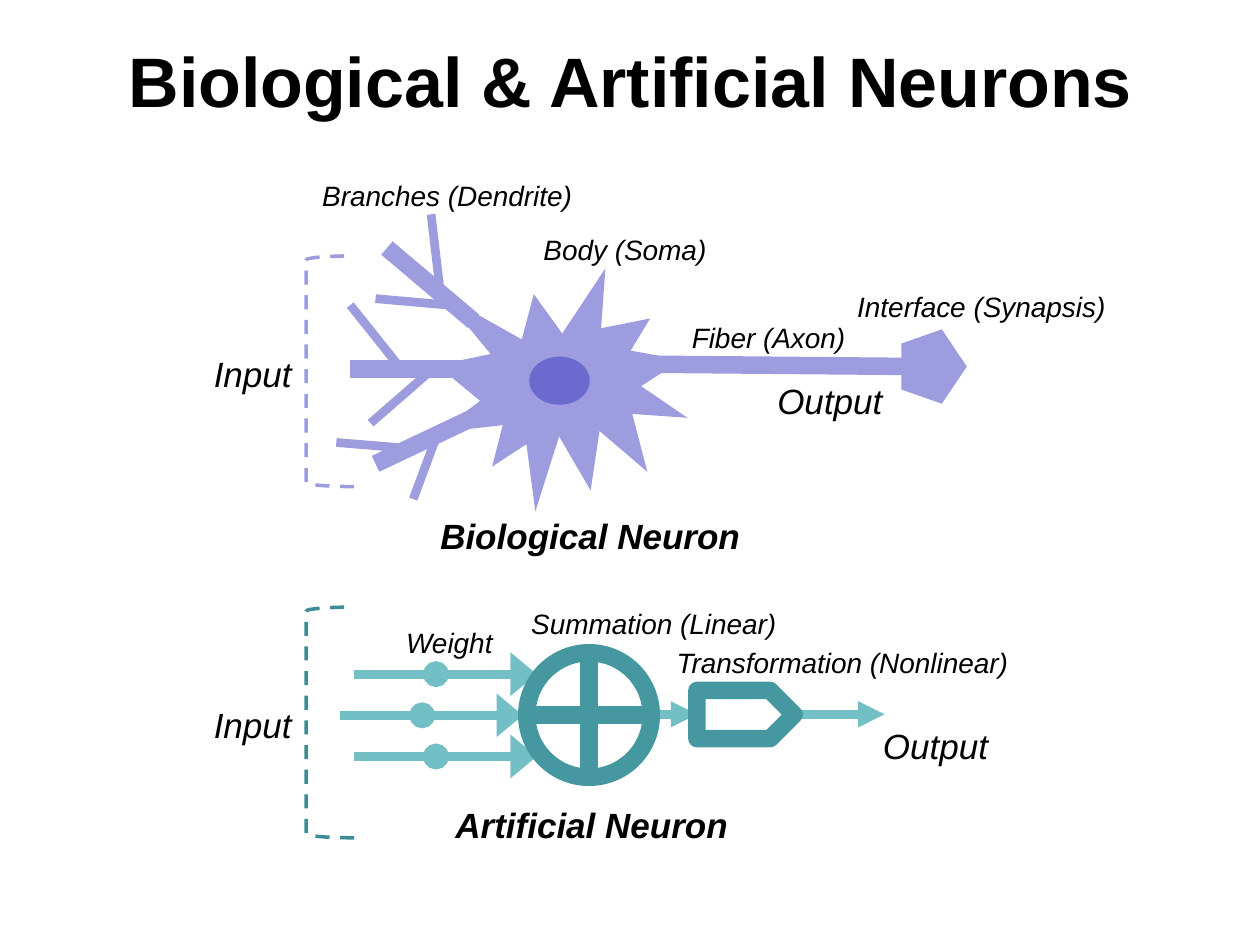
import dataclasses
import typing

import lxml.etree
import pptx
import pptx.dml.color
import pptx.enum.dml
import pptx.enum.shapes
import pptx.enum.text
import pptx.oxml.ns
import pptx.util

Cm = pptx.util.Cm
Pt = pptx.util.Pt
RGBColor = pptx.dml.color.RGBColor
Shape = pptx.enum.shapes.MSO_SHAPE
Align = pptx.enum.text.PP_ALIGN
Anchor = pptx.enum.text.MSO_ANCHOR
qn = pptx.oxml.ns.qn

BLACK = RGBColor(0x00, 0x00, 0x00)
LILAC = RGBColor(0x9C, 0x9C, 0xDF)
VIOLET = RGBColor(0x6B, 0x6B, 0xCF)
AQUA = RGBColor(0x72, 0xBF, 0xC5)
TEAL = RGBColor(0x45, 0x97, 0xA0)
DARK_TEAL = RGBColor(0x3C, 0x8C, 0x93)

THICK, THIN = 10, 5
PART = {"size": Pt(16), "italic": True}
PORT = {"size": Pt(20), "italic": True}
CAPTION = {"size": Pt(20), "bold": True, "italic": True}
TITLE = {"size": Pt(40), "bold": True}


@dataclasses.dataclass
class Label:
    text: str
    frame: tuple  # left, top, width, height in cm
    style: dict
    align: Align = Align.LEFT
    anchor: Anchor = Anchor.TOP
    shadow: bool = False


@dataclasses.dataclass
class Line:
    start: tuple  # x, y in cm
    end: tuple
    color: RGBColor
    weight: float
    ends: tuple = ()  # (tag, type, width) of each line end


def write(box: typing.Any, label: Label) -> None:
    """Fill a text box or placeholder with one formatted paragraph."""
    frame = box.text_frame
    settings = {"word_wrap": True, "vertical_anchor": label.anchor,
                "auto_size": pptx.enum.text.MSO_AUTO_SIZE.NONE}
    for name, value in settings.items():
        setattr(frame, name, value)
    para = frame.paragraphs[0]
    para.alignment = label.align
    span = para.add_run()
    span.text = label.text
    for name, value in {"name": "Arial", **label.style}.items():
        setattr(span.font, name, value)
    span.font.color.rgb = BLACK
    if label.shadow:
        effects = lxml.etree.Element(qn("a:effectLst"))
        shadow = lxml.etree.SubElement(effects, qn("a:outerShdw"),
                                       dist="38100", dir="2700000")
        lxml.etree.SubElement(shadow, qn("a:srgbClr"), val="C0C0C0")
        span.font._element.find(qn("a:solidFill")).addnext(effects)


def add_label(page: typing.Any, label: Label) -> None:
    write(page.shapes.add_textbox(*map(Cm, label.frame)), label)


def add_line(page: typing.Any, line: Line) -> None:
    connector = page.shapes.add_connector(
        pptx.enum.shapes.MSO_CONNECTOR.STRAIGHT, *map(Cm, line.start + line.end))
    connector.line.color.rgb = line.color
    connector.line.width = Pt(line.weight)
    outline = connector.line._get_or_add_ln()
    for tag, kind, width in line.ends:
        lxml.etree.SubElement(outline, qn(tag), type=kind, w=width, len="med")
    lxml.etree.SubElement(connector._element.spPr, qn("a:effectLst"))


def add_solid(page: typing.Any, kind: Shape, frame: tuple, color: RGBColor) -> typing.Any:
    shape = page.shapes.add_shape(kind, *map(Cm, frame))
    shape.shadow.inherit = False
    shape.fill.solid()
    shape.fill.fore_color.rgb = color
    shape.line.fill.background()
    return shape


def add_outline(page: typing.Any, kind: Shape, frame: tuple, color: RGBColor,
                weight: float) -> typing.Any:
    shape = page.shapes.add_shape(kind, *map(Cm, frame))
    shape.shadow.inherit = False
    shape.fill.background()
    shape.line.color.rgb = color
    shape.line.width = Pt(weight)
    return shape


def part(text: str, *frame: float, align: Align = Align.CENTER) -> Label:
    return Label(text, frame, PART, align, Anchor.MIDDLE, True)


BRANCHES = [
    ((9.55, 6.48), (7.8, 5), THICK),
    ((9.58, 7.44), (7.06, 7.44), THICK),
    ((9.83, 8.28), (7.57, 9.35), THICK),
    ((18.67, 7.39), (12.88, 7.34), THICK),  # axon
    ((8.89, 6.02), (8.69, 4.32), THIN),
    ((9.04, 6.15), (7.57, 6.02), THIN),
    ((8.05, 7.39), (7.06, 6.15), THIN),
    ((8.84, 7.34), (7.47, 8.53), THIN),
    ((8.84, 8.69), (8.33, 10.06), THIN),
    ((8.23, 9.04), (6.78, 8.92), THIN),
]

LABELS = [
    part("Branches (Dendrite)", 6.17, 3.48, 5.69, 0.91),
    part("Body (Soma)", 10.57, 4.6, 4.06, 0.86),
    part("Fiber (Axon)", 13.44, 6.45, 4.11, 0.69),
    part("Interface (Synapsis)", 16.76, 5.92, 6.05, 0.53),
    part("Weight", 7.37, 12.55, 3.38, 0.81),
    part("Summation (Linear)", 10.46, 12.17, 8, 0.81, align=Align.LEFT),
    part("Transformation (Nonlinear)", 13.39, 12.95, 7.29, 0.81, align=Align.LEFT),
    Label("Biological Neuron", (7.11, 10.24, 9.58, 0.86), CAPTION, Align.CENTER),
    Label("Artificial Neuron", (5.82, 16.08, 12.22, 0.94), CAPTION, Align.CENTER),
    Label("Input", (4.06, 6.99, 2.41, 0.86), PORT),
    Label("Input", (4.06, 14.05, 2.41, 0.86), PORT),
    Label("Output", (15.42, 7.52, 3.05, 1.07), PORT),
    Label("Output", (17.55, 14.48, 3.61, 1.19), PORT),
]


def main() -> None:
    deck = pptx.Presentation()
    deck.slide_width, deck.slide_height = Cm(25.4), Cm(19.05)
    page = deck.slides.add_slide(deck.slide_layouts[5])

    # Title
    title = page.shapes.title
    place = zip(("left", "top", "width", "height"), (0.43, 0.43, 24.56, 2.34))
    for name, value in place:
        setattr(title, name, Cm(value))
    write(title, Label("Biological & Artificial Neurons", (), TITLE,
                       Align.CENTER, Anchor.MIDDLE, True))

    # Biological neuron
    add_solid(page, Shape.EXPLOSION1, (8.81, 5.41, 5.05, 4.9), LILAC)
    add_solid(page, Shape.OVAL, (10.67, 7.19, 1.22, 0.97), VIOLET)
    for start, end, weight in BRANCHES:
        add_line(page, Line(start, end, LILAC, weight))
    synapse = add_solid(page, Shape.REGULAR_PENTAGON, (18.08, 6.73, 1.5, 1.32), LILAC)
    synapse.rotation = 90

    # Artificial neuron: weighted inputs, then the two output arrows
    for row, shift in ((-1, 0.28), (0, 0), (1, 0.28)):
        y = 14.42 + row * 0.83
        add_line(page, Line((8.51 + shift, y), (10.54 + shift, y), AQUA, THIN,
                            (("a:headEnd", "oval", "med"), ("a:tailEnd", "triangle", "lg"))))
        add_line(page, Line((6.86 + shift, y), (8.43 + shift, y), AQUA, THIN))
    for left, right in ((13.13, 14.05), (16.05, 17.83)):
        add_line(page, Line((left, 14.4), (right, 14.4), AQUA, THIN,
                            (("a:tailEnd", "triangle", "med"),)))
    add_outline(page, Shape.FLOWCHART_OR, (10.62, 13.16, 2.51, 2.51), TEAL, THICK)
    add_outline(page, Shape.PENTAGON, (14.05, 13.92, 1.96, 0.97), TEAL, THICK)

    # Input brackets
    for top, color in ((5.16, LILAC), (12.24, DARK_TEAL)):
        bracket = add_outline(page, Shape.LEFT_BRACKET, (6.17, top, 0.97, 4.65), color, 2)
        bracket.line.dash_style = pptx.enum.dml.MSO_LINE.DASH

    # Labels
    for label in LABELS:
        add_label(page, label)

    deck.save("out.pptx")


if __name__ == "__main__":
    main()
